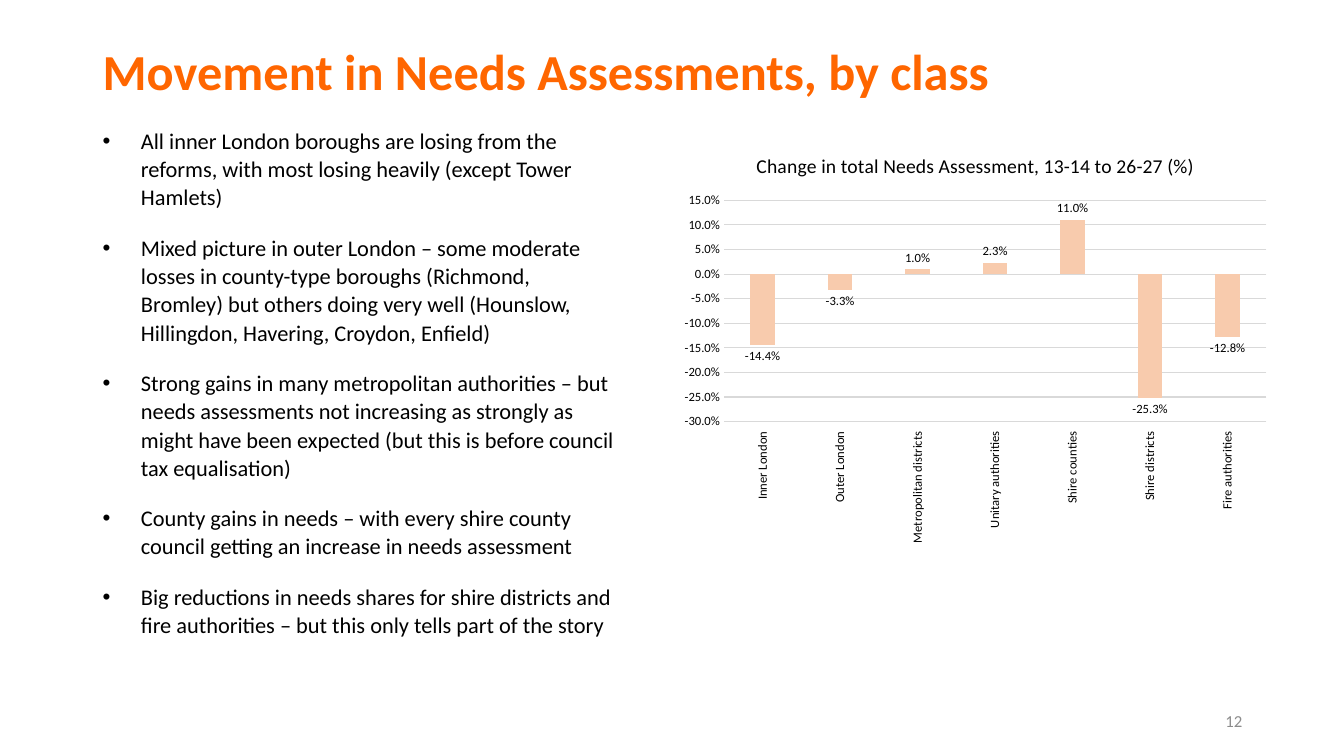
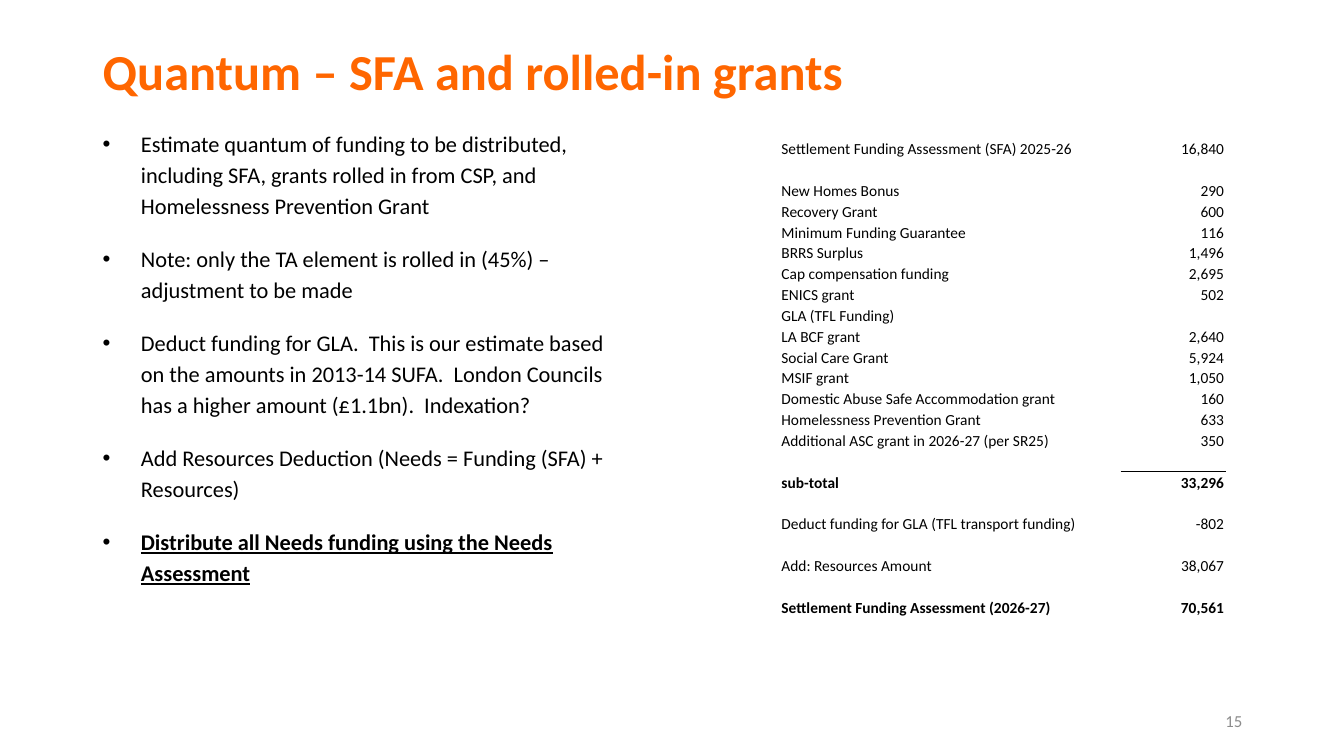
from dataclasses import dataclass
from typing import Any

from lxml import etree
from pptx import Presentation
from pptx import util as u
from pptx.chart import data as cd
from pptx.dml.color import RGBColor
from pptx.enum import chart as ce
from pptx.enum import text
from pptx.oxml.ns import qn

PX = 9144
FONT = "Calibri"
COLORS = {"title": "FF6600", "text": "000000", "number": "8C8C8C", "grid": "D9D9D9", "bar": "F8CBAD"}


@dataclass(frozen=True)
class Box:
    x: int
    y: int
    w: int
    h: int

    def emu(self) -> list[u.Emu]:
        return [px(v) for v in (self.x, self.y, self.w, self.h)]


@dataclass(frozen=True)
class Bullet:
    text: str
    strong: bool = False


@dataclass(frozen=True)
class Row:
    label: str = ""
    value: str = ""
    bold: bool = False
    rule: bool = False


@dataclass(frozen=True)
class Page:
    title: str
    number: int
    spacing: float
    bullets: list[Bullet]


TITLE = Box(92, 41, 1150, 66)
BODY = Box(92, 120, 530, 555)
NUMBER = Box(942, 695, 300, 40)
CHART = Box(667, 134, 601, 413)
TABLE = Box(774, 137, 441, 476)
COLUMNS = (338, 103)

NEEDS = Page("Movement in Needs Assessments, by class", 12, 1.05, [
    Bullet("All inner London boroughs are losing from the reforms, with most losing heavily "
           "(except Tower Hamlets)"),
    Bullet("Mixed picture in outer London – some moderate losses in county-type boroughs "
           "(Richmond, Bromley) but others doing very well (Hounslow, Hillingdon, Havering, "
           "Croydon, Enfield)"),
    Bullet("Strong gains in many metropolitan authorities – but needs assessments not increasing "
           "as strongly as might have been expected (but this is before council tax equalisation)"),
    Bullet("County gains in needs – with every shire county council getting an increase in needs "
           "assessment"),
    Bullet("Big reductions in needs shares for shire districts and fire authorities – but this "
           "only tells part of the story"),
])
QUANTUM = Page("Quantum – SFA and rolled-in grants", 15, 1.15, [
    Bullet("Estimate quantum of funding to be distributed, including SFA, grants rolled in from "
           "CSP, and Homelessness Prevention Grant"),
    Bullet("Note: only the TA element is rolled in (45%) – adjustment to be made"),
    Bullet("Deduct funding for GLA.  This is our estimate based on the amounts in 2013-14 SUFA.  "
           "London Councils has a higher amount (£1.1bn).  Indexation?"),
    Bullet("Add Resources Deduction (Needs = Funding (SFA) + Resources)"),
    Bullet("Distribute all Needs funding using the Needs Assessment", strong=True),
])
CHANGES = {
    "Inner London": -0.144,
    "Outer London": -0.033,
    "Metropolitan districts": 0.01,
    "Unitary authorities": 0.023,
    "Shire counties": 0.11,
    "Shire districts": -0.253,
    "Fire authorities": -0.128,
}
FUNDING = [
    Row("Settlement Funding Assessment (SFA) 2025-26", "16,840"),
    Row(),
    Row("New Homes Bonus", "290"),
    Row("Recovery Grant", "600"),
    Row("Minimum Funding Guarantee", "116"),
    Row("BRRS Surplus", "1,496"),
    Row("Cap compensation funding", "2,695"),
    Row("ENICS grant", "502"),
    Row("GLA (TFL Funding)"),
    Row("LA BCF grant", "2,640"),
    Row("Social Care Grant", "5,924"),
    Row("MSIF grant", "1,050"),
    Row("Domestic Abuse Safe Accommodation grant", "160"),
    Row("Homelessness Prevention Grant", "633"),
    Row("Additional ASC grant in 2026-27 (per SR25)", "350"),
    Row(),
    Row("sub-total", "33,296", bold=True, rule=True),
    Row(),
    Row("Deduct funding for GLA (TFL transport funding)", "-802"),
    Row(),
    Row("Add: Resources Amount", "38,067"),
    Row(),
    Row("Settlement Funding Assessment (2026-27)", "70,561", bold=True),
]


def px(n: int) -> u.Emu:
    return u.Emu(n * PX)


def rgb(name: str) -> RGBColor:
    return RGBColor.from_string(COLORS[name])


def style(font: Any, size: int, color: str = "text", bold: bool = False, underline: bool = False) -> None:
    font.name = FONT
    font.size = u.Pt(size)
    font.bold = bold
    font.underline = underline or None
    font.color.rgb = rgb(color)


def write(p: Any, words: str, *, align: Any = None, spacing: float | None = None, **fmt: Any) -> None:
    p.alignment = align
    p.line_spacing = spacing
    r = p.add_run()
    r.text = words
    style(r.font, **fmt)


def add_box(s: Any, box: Box, anchor: Any = text.MSO_ANCHOR.MIDDLE) -> Any:
    tf = s.shapes.add_textbox(*box.emu()).text_frame
    tf.word_wrap = True
    tf.vertical_anchor = anchor
    return tf


def add_bullets(s: Any, page: Page) -> None:
    tf = add_box(s, BODY, text.MSO_ANCHOR.TOP)
    for i, b in enumerate(page.bullets):
        p = tf.add_paragraph() if i else tf.paragraphs[0]
        write(p, b.text, spacing=page.spacing, size=16, bold=b.strong, underline=b.strong)
        p.space_before = u.Pt(10 if i else 0)
        p.space_after = u.Pt(6)
        pPr = p._p.get_or_add_pPr()
        pPr.set("marL", str(px(38)))
        pPr.set("indent", str(-px(38)))
        etree.SubElement(pPr, qn("a:buFont")).set("typeface", "Arial")
        etree.SubElement(pPr, qn("a:buChar")).set("char", "•")


def add_page(prs: Any, page: Page) -> Any:
    s = prs.slides.add_slide(prs.slide_layouts[6])
    write(add_box(s, TITLE).paragraphs[0], page.title, spacing=0.9, size=36, color="title", bold=True)
    add_bullets(s, page)
    write(add_box(s, NUMBER).paragraphs[0], str(page.number), align=text.PP_ALIGN.RIGHT,
          size=12, color="number")
    return s


def grey_line(fmt: Any) -> None:
    fmt.line.color.rgb = rgb("grid")
    fmt.line.width = u.Pt(0.75)


def add_change_chart(s: Any) -> None:
    data = cd.CategoryChartData(number_format="0.0%")
    data.categories = list(CHANGES)
    data.add_series("Series 1", list(CHANGES.values()))
    chart = s.shapes.add_chart(ce.XL_CHART_TYPE.COLUMN_CLUSTERED, *CHART.emu(), data).chart
    style(chart.font, 10)
    chart.has_legend = False
    chart.has_title = True
    write(chart.chart_title.text_frame.paragraphs[0],
          "Change in total Needs Assessment, 13-14 to 26-27 (%)", size=14)
    chart.chart_title.include_in_layout = False

    cat, val = chart.category_axis, chart.value_axis
    for axis in (cat, val):
        style(axis.tick_labels.font, 9)
        axis.major_tick_mark = axis.minor_tick_mark = ce.XL_TICK_MARK.NONE
    cat.tick_label_position = ce.XL_TICK_LABEL_POSITION.LOW
    grey_line(cat.format)
    body = cat._element.find(qn("c:txPr")).find(qn("a:bodyPr"))
    body.set("rot", "-5400000")
    body.set("vert", "horz")
    val.minimum_scale, val.maximum_scale, val.major_unit = -0.3, 0.15, 0.05
    val.tick_labels.number_format = "0.0%"
    val.tick_labels.number_format_is_linked = False
    val.format.line.fill.background()
    grey_line(val.major_gridlines.format)

    plot = chart.plots[0]
    plot.vary_by_categories = False
    plot.gap_width, plot.overlap = 219, -27
    series = plot.series[0]
    series.invert_if_negative = False
    series.format.fill.solid()
    series.format.fill.fore_color.rgb = rgb("bar")
    labels = series.data_labels
    labels.show_value = True
    labels.number_format = "0.0%"
    labels.number_format_is_linked = False
    labels.position = ce.XL_LABEL_POSITION.OUTSIDE_END
    style(labels.font, 9)


def add_rule(cell: Any, edge: str) -> None:
    ln = etree.Element(qn(f"a:{edge}"), w=str(u.Pt(0.5)))
    fill = etree.SubElement(ln, qn("a:solidFill"))
    etree.SubElement(fill, qn("a:srgbClr")).set("val", COLORS["text"])
    cell._tc.get_or_add_tcPr().insert(0, ln)


def fill_cell(cell: Any, words: str, align: Any, bold: bool) -> None:
    cell.fill.background()
    cell.vertical_anchor = text.MSO_ANCHOR.BOTTOM
    cell.margin_left = cell.margin_right = cell.margin_top = px(1)
    cell.margin_bottom = 0
    p = cell.text_frame.paragraphs[0]
    if words:
        write(p, words, align=align, size=11, bold=bold)
    else:
        etree.SubElement(p._p, qn("a:endParaRPr")).set("sz", "1100")


def add_funding_table(s: Any) -> None:
    table = s.shapes.add_table(len(FUNDING), len(COLUMNS), *TABLE.emu()).table
    table.first_row = table.horz_banding = False
    for col, width in zip(table.columns, COLUMNS):
        col.width = px(width)
    for i, row in enumerate(FUNDING):
        fill_cell(table.cell(i, 0), row.label, text.PP_ALIGN.LEFT, row.bold)
        fill_cell(table.cell(i, 1), row.value, text.PP_ALIGN.RIGHT, row.bold)
        if row.rule:
            add_rule(table.cell(i - 1, 1), "lnB")
            add_rule(table.cell(i, 1), "lnT")


def main() -> None:
    prs = Presentation()
    prs.slide_width, prs.slide_height = px(1333), px(750)
    add_change_chart(add_page(prs, NEEDS))
    add_funding_table(add_page(prs, QUANTUM))
    prs.save("out.pptx")


if __name__ == "__main__":
    main()
